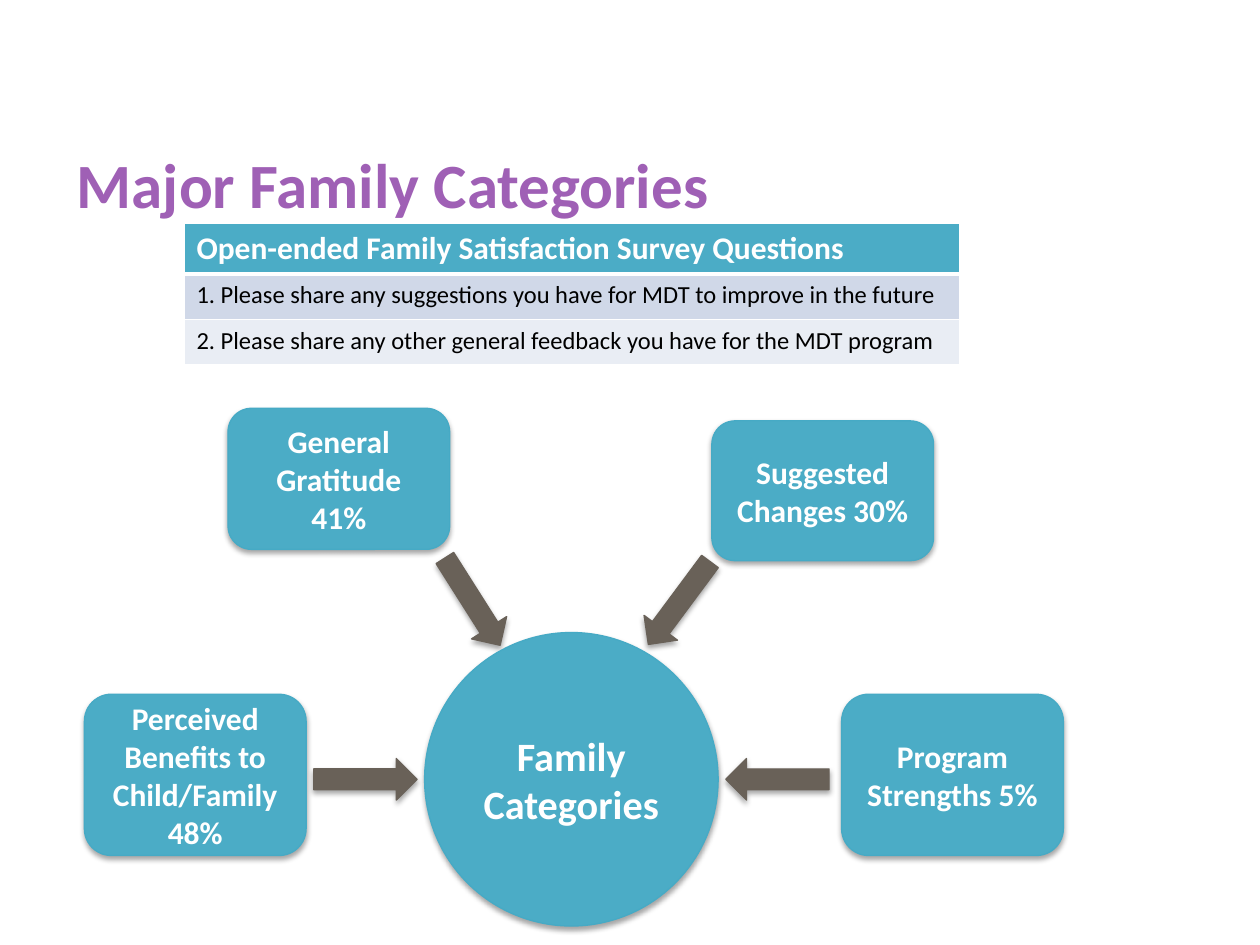
"""Build the Major Family Categories slide."""
from lxml import etree
from pptx import Presentation
from pptx.dml.color import RGBColor
from pptx.enum import shapes, text
from pptx.oxml import parse_xml
from pptx.oxml.ns import nsdecls
from pptx.util import Inches, Pt

PURPLE = RGBColor(0x9F, 0x60, 0xB5)
TEAL = RGBColor(0x4B, 0xAC, 0xC6)
TEAL_LINE = RGBColor(0x46, 0xAA, 0xC5)
BROWN = RGBColor(0x69, 0x61, 0x58)
WHITE = RGBColor(0xFF, 0xFF, 0xFF)
BLACK = RGBColor(0, 0, 0)
BAND_DARK = RGBColor(0xD0, 0xD8, 0xE8)
BAND_LIGHT = RGBColor(0xE9, 0xED, 0xF4)
KIND = shapes.MSO_SHAPE


def style_text(tf, size, color, bold, align):
    p = tf.paragraphs[0]
    p.alignment = align
    font = p.runs[0].font
    font.name, font.size, font.bold = "Calibri", Pt(size), bold
    font.color.rgb = color


def add_block(kind, box, fill, line):
    sp = s.shapes.add_shape(kind, *map(Inches, box))
    sp.fill.solid()
    sp.fill.fore_color.rgb = fill
    sp.line.color.rgb = line
    sp.line.width = Pt(0.75)
    sp._element.spPr.append(parse_xml(
        f'<a:effectLst {nsdecls("a")}><a:outerShdw blurRad="{Pt(3.1)}" dist="{Pt(1.8)}" '
        'dir="5400000" rotWithShape="0"><a:srgbClr val="000000"><a:alpha val="35000"/>'
        '</a:srgbClr></a:outerShdw></a:effectLst>'))
    return sp


prs = Presentation()
prs.slide_width, prs.slide_height = Inches(10), Inches(7.5)
s = prs.slides.add_slide(prs.slide_layouts[5])

title = s.shapes.title
title.left, title.top, title.width, title.height = map(Inches, (0.51, 0.87, 9, 1.17))
title.text_frame.text = "Major Family Categories"
title.text_frame.vertical_anchor = text.MSO_ANCHOR.MIDDLE
style_text(title.text_frame, 36, PURPLE, True, text.PP_ALIGN.LEFT)

for left, top, angle in [(2.49, 6.02, 0), (3.34, 4.61, 57.6),
                         (4.98, 4.62, 126.6), (5.76, 6.02, 180)]:
    arrow = add_block(KIND.RIGHT_ARROW, (left, top, 0.82, 0.33), BROWN, BROWN)
    arrow.rotation = angle

for kind, box, label, size in [
    (KIND.OVAL, (3.37, 5.02, 2.33, 2.33), "Family Categories", 23),
    (KIND.ROUNDED_RECTANGLE, (0.67, 5.51, 1.76, 1.28), "Perceived Benefits to Child/Family 48%", 18),
    (KIND.ROUNDED_RECTANGLE, (6.68, 5.51, 1.76, 1.28), "Program Strengths 5%", 18),
    (KIND.ROUNDED_RECTANGLE, (5.65, 3.34, 1.76, 1.11), "Suggested Changes 30%", 18),
    (KIND.ROUNDED_RECTANGLE, (1.81, 3.24, 1.76, 1.12), "General Gratitude 41%", 18),
]:
    sp = add_block(kind, box, TEAL, TEAL_LINE)
    tf = sp.text_frame
    tf.text = label
    tf.word_wrap = True
    tf.vertical_anchor = text.MSO_ANCHOR.MIDDLE
    style_text(tf, size, WHITE, True, text.PP_ALIGN.CENTER)

rows = [
    ("Open-ended Family Satisfaction Survey Questions", 0.4, 18, WHITE, TEAL),
    ("1. Please share any suggestions you have for MDT to improve in the future", 0.36, 14, BLACK, BAND_DARK),
    ("2. Please share any other general feedback you have for the MDT program", 0.36, 14, BLACK, BAND_LIGHT),
]
table = s.shapes.add_table(len(rows), 1, *map(Inches, (1.46, 1.77, 6.16, 1.12))).table
for i, (words, height, size, color, fill) in enumerate(rows):
    table.rows[i].height = Inches(height)
    cell = table.cell(i, 0)
    cell.text = words
    style_text(cell.text_frame, size, color, i == 0, text.PP_ALIGN.LEFT)
    borders = {"L": 1, "R": 1, "T": 3 if i == 1 else 1, "B": 3 if i == 0 else 1}
    tcPr = cell._tc.get_or_add_tcPr()
    for side, width in borders.items():
        tcPr.append(parse_xml(
            f'<a:ln{side} {nsdecls("a")} w="{Pt(width)}"><a:solidFill>'
            f'<a:srgbClr val="{WHITE}"/></a:solidFill></a:ln{side}>'))
    cell.fill.solid()
    cell.fill.fore_color.rgb = fill

prs.save("out.pptx")
